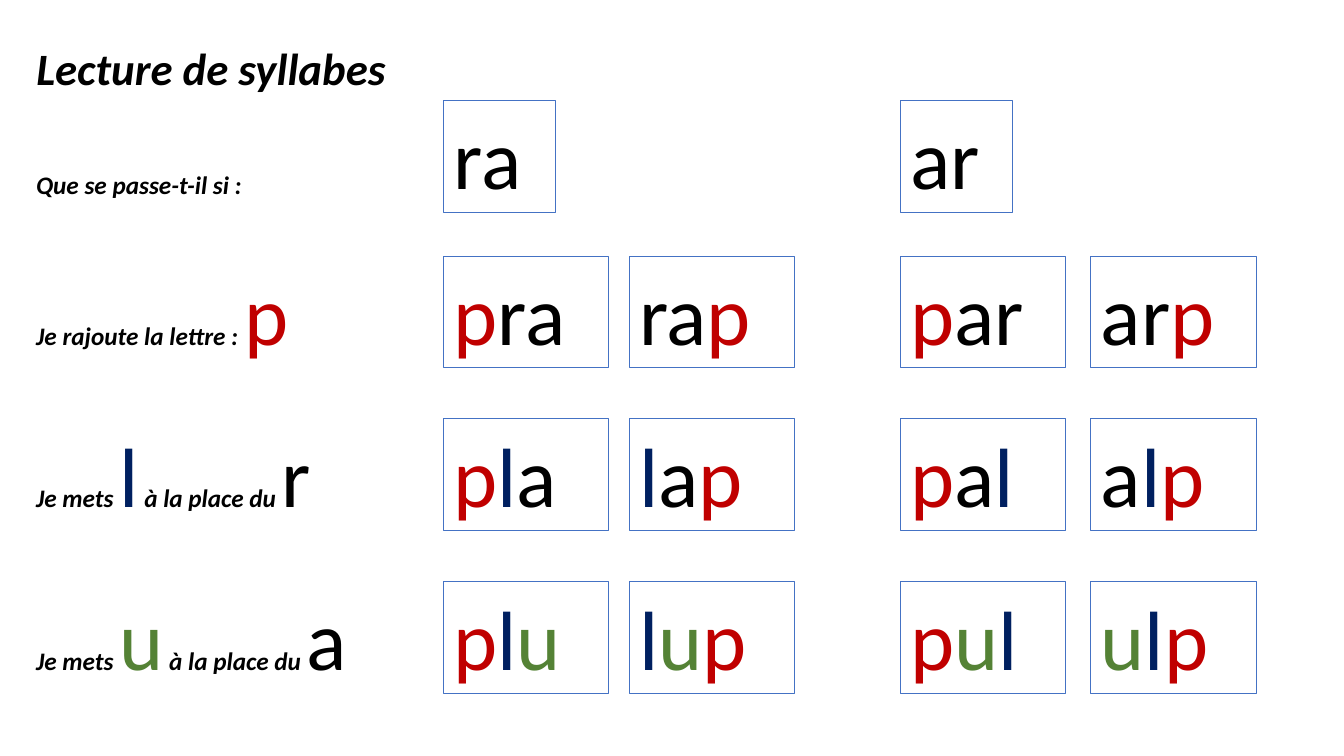
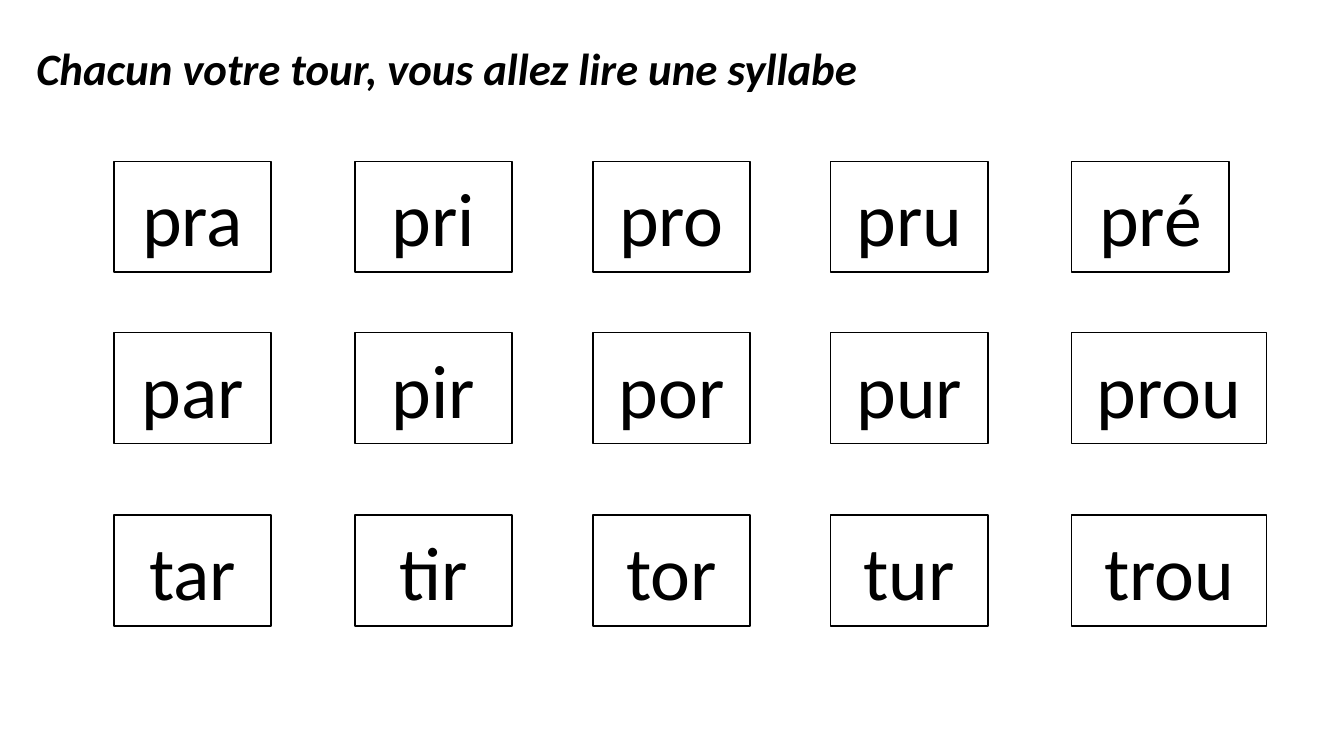
from itertools import groupby

from pptx import Presentation
from pptx.dml.color import RGBColor
from pptx.enum.shapes import MSO_SHAPE
from pptx.enum.text import MSO_ANCHOR, MSO_AUTO_SIZE, PP_ALIGN
from pptx.util import Inches, Pt

FONT = "Calibri"
BLACK, WHITE, BLUE = "000000", "FFFFFF", "4472C4"
LETTER_COLORS = {"p": "C00000", "l": "002060", "u": "548235"}
LEFT = 0.26


def rgb(color):
    return RGBColor.from_string(color)


def add_text(shape, text, size=60, emphasis=False, colors=None,
             align=PP_ALIGN.LEFT, anchor=MSO_ANCHOR.TOP, wrap=True):
    """Append text to the shape, one run for each stretch of one colour."""
    tf = shape.text_frame
    tf.auto_size = MSO_AUTO_SIZE.NONE
    tf.word_wrap = wrap
    tf.vertical_anchor = anchor
    p = tf.paragraphs[0]
    p.alignment = align
    for color, letters in groupby(text, lambda c: (colors or {}).get(c, BLACK)):
        r = p.add_run()
        r.text = "".join(letters)
        r.font.name = FONT
        r.font.size = Pt(size)
        r.font.bold = r.font.italic = emphasis
        r.font.color.rgb = rgb(color)


prs = Presentation()
prs.slide_width, prs.slide_height = Inches(13.33), Inches(7.5)

# Slides and their titles
titles = [("Lecture de syllabes", 3.88),
          ("Chacun votre tour, vous allez lire une syllabe", 8.6)]
for title, width in titles:
    s = prs.slides.add_slide(prs.slide_layouts[5])
    sp = s.shapes.title
    sp.left, sp.top = Inches(LEFT), Inches(0.35)
    sp.width, sp.height = Inches(width), Inches(0.64)
    add_text(sp, title, size=32, emphasis=True, wrap=False)
reading, practice = prs.slides

# Instructions: (top, width, height, parts), with every second part a large letter
instructions = [
    (1.63, 2.32, 0.4, ["Que se passe-t-il si :"]),
    (2.54, 2.91, 1.11, ["Je rajoute la lettre : ", "p"]),
    (4.15, 3.46, 1.11, ["Je mets ", "l", " à la place du ", "r"]),
    (5.77, 3.63, 1.11, ["Je mets ", "u", " à la place du ", "a"]),
]
for top, width, height, parts in instructions:
    sp = reading.shapes.add_textbox(Inches(LEFT), Inches(top), Inches(width), Inches(height))
    for i, part in enumerate(parts):
        if i % 2:
            add_text(sp, part, colors=LETTER_COLORS, wrap=False)
        else:
            add_text(sp, part, size=18, emphasis=True, wrap=False)

# Syllable boxes of both slides: (slide, syllable, left, top, width, height)
boxes = []
reading_rows = [
    (1, 1.11, ["ra", None, "ar", None]),
    (2.54, 1.64, ["pra", "rap", "par", "arp"]),
    (4.15, 1.64, ["pla", "lap", "pal", "alp"]),
    (5.77, 1.64, ["plu", "lup", "pul", "ulp"]),
]
for top, width, syllables in reading_rows:
    for left, syllable in zip([4.4, 6.24, 8.93, 10.82], syllables):
        if syllable:
            boxes.append((reading, syllable, left, top, width, 1.11))

practice_rows = [
    (1.6, ["pra", "pri", "pro", "pru", "pré"]),
    (3.3, ["par", "pir", "por", "pur", "prou"]),
    (5.11, ["tar", "tir", "tor", "tur", "trou"]),
]
for top, syllables in practice_rows:
    for left, syllable in zip([1.13, 3.52, 5.88, 8.24, 10.63], syllables):
        width = 1.93 if len(syllable) > 3 else 1.56
        boxes.append((practice, syllable, left, top, width, 1.1))

for s, syllable, *place in boxes:
    sp = s.shapes.add_shape(MSO_SHAPE.RECTANGLE, *[Inches(v) for v in place])
    sp.shadow.inherit = False
    if s is reading:
        sp.fill.background()
        sp.line.color.rgb = rgb(BLUE)
        sp.line.width = Pt(0.75)
        add_text(sp, syllable, colors=LETTER_COLORS)
    else:
        sp.fill.solid()
        sp.fill.fore_color.rgb = rgb(WHITE)
        sp.line.color.rgb = rgb(BLACK)
        sp.line.width = Pt(1)
        add_text(sp, syllable, size=54, align=PP_ALIGN.CENTER, anchor=MSO_ANCHOR.MIDDLE)

prs.save("out.pptx")
